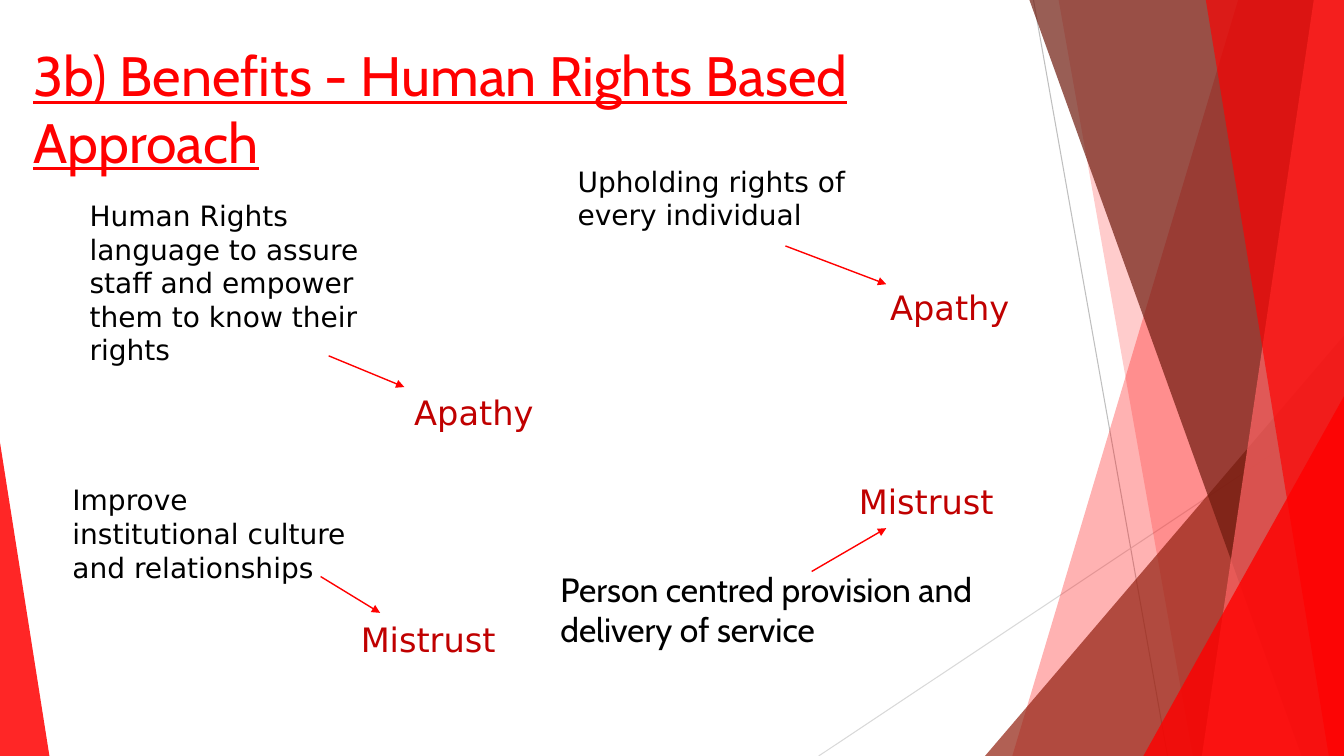
import lxml.etree
import pptx
import pptx.dml.color
import pptx.enum.shapes
import pptx.enum.text
import pptx.oxml.ns
import pptx.util
from pptx.util import Inches

WIDTH, HEIGHT = 13.33, 7.5
RED, DARK_RED, BLACK = "FF0000", "C00000", "000000"
SANS, CABIN = "DejaVu Sans", "Cabin"


def colour(hex_string):
    return pptx.dml.color.RGBColor.from_string(hex_string)


def add_xml(parent, tag, **attributes):
    lxml.etree.SubElement(parent, pptx.oxml.ns.qn(tag), attributes)


def paint(shape, hex_string, opacity):
    """Fill a shape with a translucent colour and no outline."""
    shape.shadow.inherit = False
    shape.fill.solid()
    shape.fill.fore_color.rgb = colour(hex_string)
    fill = shape._element.spPr.find(pptx.oxml.ns.qn("a:solidFill"))
    add_xml(fill[0], "a:alpha", val=str(opacity * 1000))
    shape.line.fill.background()


def add_facet(slide, top, bottom, hex_string, opacity):
    """Fill from a slanted left edge to the right side of the slide."""
    builder = slide.shapes.build_freeform(Inches(top), 0)
    corners = [(WIDTH, 0), (WIDTH, HEIGHT), (bottom, HEIGHT)]
    builder.add_line_segments([(Inches(x), Inches(y)) for x, y in corners])
    paint(builder.convert_to_shape(), hex_string, opacity)


def add_corner(slide, left, top, width, apex, hex_string, opacity):
    """Right-angled triangle that stands on the bottom edge."""
    shape = slide.shapes.add_shape(
        pptx.enum.shapes.MSO_SHAPE.ISOSCELES_TRIANGLE,
        Inches(left), Inches(top), Inches(width), Inches(HEIGHT - top))
    shape.adjustments[0] = apex
    paint(shape, hex_string, opacity)


def add_line(slide, start, end, hex_string, weight, arrow=False):
    connector = slide.shapes.add_connector(
        pptx.enum.shapes.MSO_CONNECTOR.STRAIGHT,
        *(Inches(value) for value in start + end))
    connector.line.color.rgb = colour(hex_string)
    connector.line.width = pptx.util.Pt(weight)
    properties = connector._element.spPr
    if arrow:
        outline = properties.find(pptx.oxml.ns.qn("a:ln"))
        add_xml(outline, "a:tailEnd", type="triangle")
    add_xml(properties, "a:effectLst")


def write(shape, box, text, size, font_name, hex_string, underline=None):
    """Place a text shape and fill it with one formatted paragraph."""
    for name, value in zip(("left", "top", "width", "height"), box):
        setattr(shape, name, Inches(value))
    frame = shape.text_frame
    frame_format = {
        "word_wrap": True,
        "auto_size": pptx.enum.text.MSO_AUTO_SIZE.NONE,
        "vertical_anchor": pptx.enum.text.MSO_ANCHOR.TOP,
    }
    for name, value in frame_format.items():
        setattr(frame, name, value)
    paragraph = frame.paragraphs[0]
    paragraph.alignment = pptx.enum.text.PP_ALIGN.LEFT
    run = paragraph.add_run()
    run.text = text
    font_format = {"size": pptx.util.Pt(size), "name": font_name, "underline": underline}
    for name, value in font_format.items():
        setattr(run.font, name, value)
    run.font.color.rgb = colour(hex_string)


def add_text(slide, box, *text_format):
    write(slide.shapes.add_textbox(0, 0, 0, 0), box, *text_format)


def add_decoration(slide):
    add_line(slide, (10.25, 0), (11.58, HEIGHT), "BFBFBF", 0.75)
    add_line(slide, (WIDTH, 4.03), (8.12, HEIGHT), "D9D9D9", 0.75)
    add_facet(slide, 12.28, 10.04, RED, 30)
    add_facet(slide, 10.5, 11.83, RED, 20)
    add_corner(slide, 9.77, 3.33, 3.56, 1, "932313", 72)
    add_facet(slide, 10.21, 12.91, "6E1A0E", 70)
    add_facet(slide, 13.03, 11.92, "FF6666", 70)
    add_facet(slide, 11.96, 13.18, RED, 65)
    add_corner(slide, 11.34, 3.93, 1.99, 1, RED, 80)
    add_corner(slide, 0, 4.39, 0.49, 0, RED, 85)


def main():
    presentation = pptx.Presentation()
    presentation.slide_width = Inches(WIDTH)
    presentation.slide_height = Inches(HEIGHT)
    slide = presentation.slides.add_slide(presentation.slide_layouts[5])

    add_decoration(slide)

    # Title
    write(slide.shapes.title, (0.23, 0.36, 9.14, 1.21),
          "3b) Benefits - Human Rights Based Approach", 39.6, CABIN, RED, True)

    # Benefits
    benefits = [
        ((0.79, 1.92, 3, 2.46), "Human Rights language to assure staff and "
         "empower them to know their rights", 20, SANS),
        ((5.63, 1.58, 3, 0.77), "Upholding rights of every individual", 20, SANS),
        ((0.62, 4.74, 3, 1.11),
         "Improve institutional culture and relationships", 20, SANS),
        ((5.46, 5.59, 4.4, 0.91),
         "Person centred provision and delivery of service", 24, CABIN),
    ]
    for box, text, size, font_name in benefits:
        add_text(slide, box, text, size, font_name, BLACK)

    # Problems that the benefits address
    problems = [
        (4.01, 3.84, 1.62, "Apathy"),
        (8.73, 2.8, 1.62, "Apathy"),
        (3.48, 6.09, 3, "Mistrust"),
        (8.42, 4.72, 3, "Mistrust"),
    ]
    for left, top, width, text in problems:
        add_text(slide, (left, top, width, 0.5), text, 24, SANS, DARK_RED)

    # Arrows from benefit to problem
    arrows = [
        ((3.26, 3.53), (4.01, 3.84)),
        ((7.79, 2.44), (8.79, 2.82)),
        ((3.18, 5.72), (3.77, 6.08)),
        ((8.05, 5.67), (8.79, 5.24)),
    ]
    for start, end in arrows:
        add_line(slide, start, end, RED, 1, arrow=True)

    presentation.save("out.pptx")


if __name__ == "__main__":
    main()
